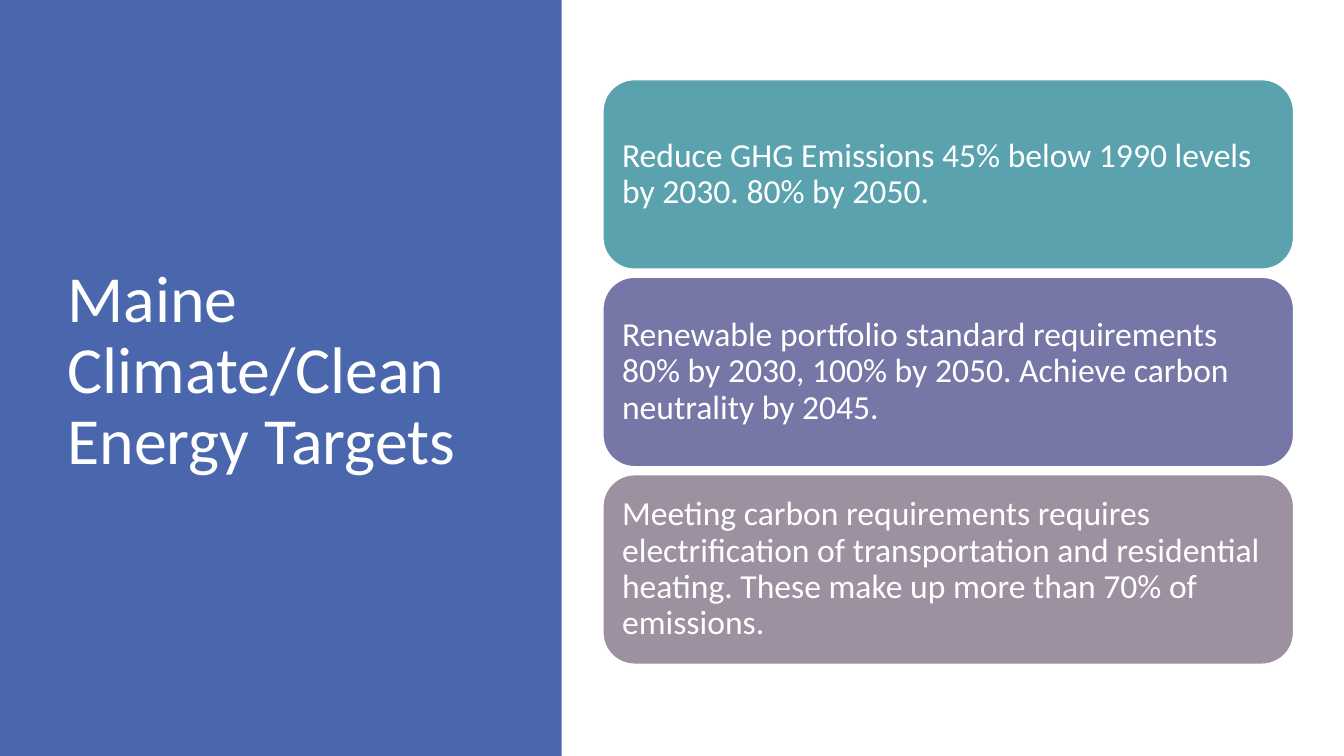
from pptx import Presentation
from pptx.dml.color import RGBColor
from pptx.enum.shapes import MSO_SHAPE
from pptx.enum.text import MSO_ANCHOR, PP_ALIGN
from pptx.util import Inches, Pt

WHITE = "FFFFFF"
TARGETS = [
    ("5AA2AE", "Reduce GHG Emissions 45% below 1990 levels by 2030. 80% by 2050."),
    ("7677A6", "Renewable portfolio standard requirements 80% by 2030, 100% by 2050. "
               "Achieve carbon neutrality by 2045."),
    ("9D90A0", "Meeting carbon requirements requires electrification of transportation "
               "and residential heating. These make up more than 70% of emissions."),
]
CARD_TOP = 0.79
CARD_PITCH = 1.96


def color(value):
    """Return the colour of a hex string."""
    return RGBColor.from_string(value)


def write_text(shape, text, size):
    """Set white, left-aligned, vertically centred text in a shape."""
    frame = shape.text_frame
    frame.word_wrap = True
    frame.vertical_anchor = MSO_ANCHOR.MIDDLE
    frame.margin_left = frame.margin_right = Inches(0.1)
    frame.margin_top = frame.margin_bottom = Inches(0.1)
    frame.text = text
    paragraph = frame.paragraphs[0]
    paragraph.alignment = PP_ALIGN.LEFT
    paragraph.line_spacing = 0.9
    font = paragraph.runs[0].font
    font.name = "Calibri"
    font.size = Pt(size)
    font.color.rgb = color(WHITE)


def add_block(slide, preset, left, top, width, height, fill):
    """Add a filled shape without shadow or outline."""
    shape = slide.shapes.add_shape(
        preset, Inches(left), Inches(top), Inches(width), Inches(height))
    shape.shadow.inherit = False
    shape.fill.solid()
    shape.fill.fore_color.rgb = color(fill)
    shape.line.fill.background()
    return shape


def add_title(slide, text):
    """Add the slide title over the side panel."""
    title = slide.shapes.add_textbox(
        Inches(0.57), Inches(0.68), Inches(4.16), Inches(6.02))
    write_text(title, text, 47)


def add_target_card(slide, top, fill, text):
    """Add a rounded card holding one target."""
    card = add_block(slide, MSO_SHAPE.ROUNDED_RECTANGLE, 5.98, top, 6.85, 1.88, fill)
    card.line.color.rgb = color(WHITE)
    card.line.width = Pt(1)
    write_text(card, text, 24)


def main():
    """Build and save the slide."""
    presentation = Presentation()
    presentation.slide_width = Inches(13.33)
    presentation.slide_height = Inches(7.5)
    slide = presentation.slides.add_slide(presentation.slide_layouts[6])
    add_block(slide, MSO_SHAPE.RECTANGLE, 0, 0, 5.57, 7.5, "4A66AC")
    add_title(slide, "Maine Climate/Clean Energy Targets")
    for index, (fill, text) in enumerate(TARGETS):
        add_target_card(slide, CARD_TOP + index * CARD_PITCH, fill, text)
    presentation.save("out.pptx")


if __name__ == "__main__":
    main()
